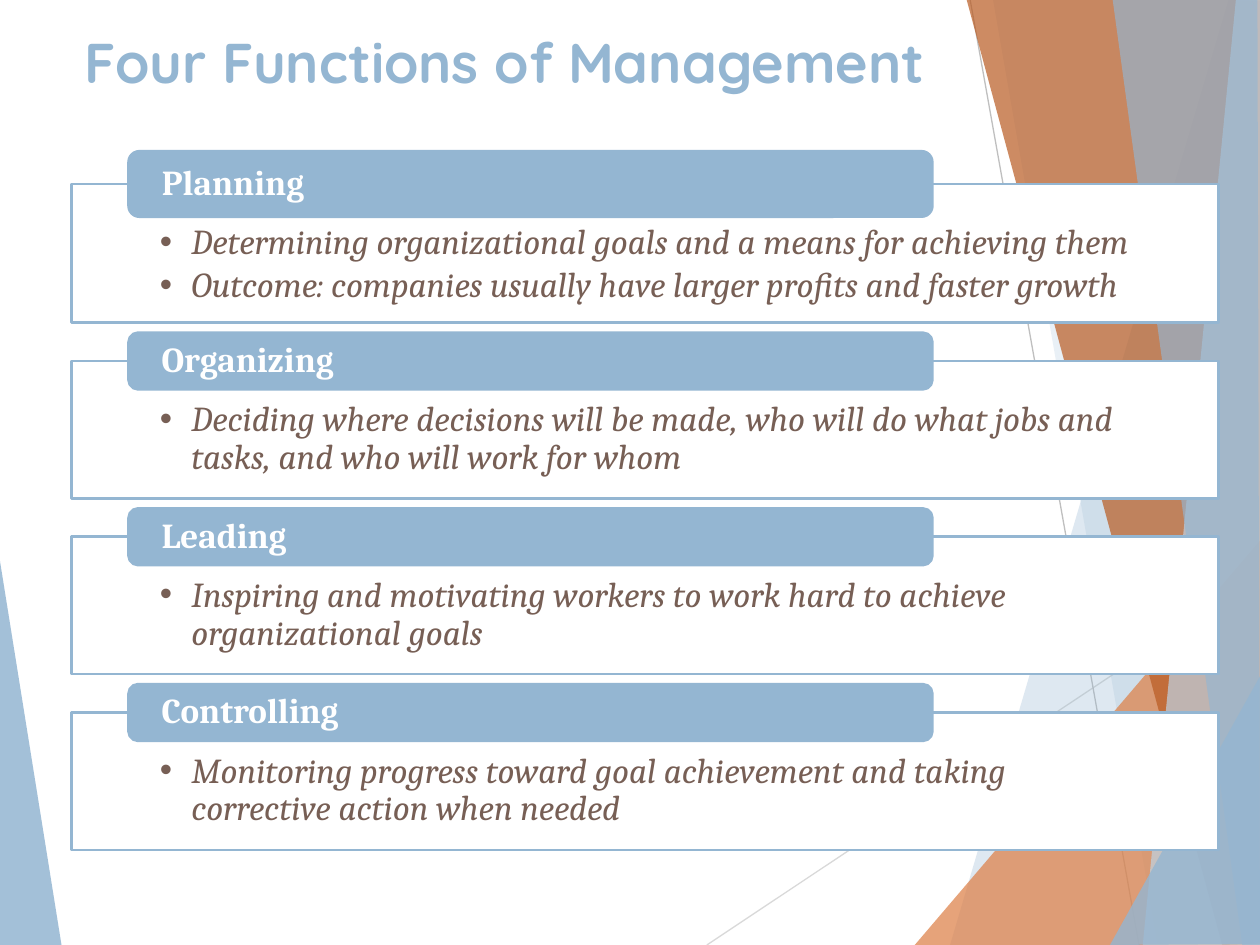
from pptx import Presentation
from pptx import util as u
from pptx.dml.color import RGBColor
from pptx.enum import shapes, text
from pptx.oxml.ns import qn
from lxml import etree

BLUE, BROWN, WHITE = "94B6D2", "775F55", "FFFFFF"

RAYS = [
    (BLUE, 85, [(-0.01, 4.39), (0.49, 7.51), (-0.01, 7.5)]),
    (BLUE, 30, [(9.75, 0), (7.54, 7.5), (10.02, 7.51), (10.01, 0.01)]),
    (BLUE, 20, [(7.88, -0.01), (9.19, 7.5), (10.01, 7.5), (10.01, -0.01)]),
    ("DD8047", 72, [(7.26, 7.5), (10, 4.29), (10.01, 7.5)]),
    ("B95B22", 70, [(7.67, -0.01), (9.7, 7.5), (10.01, 7.49), (10.01, -0.01)]),
    ("BFD3E4", 70, [(9.81, -0.01), (9.07, 7.5), (10.01, 7.5), (10, -0.01)]),
    (BLUE, 65, [(8.83, -0.01), (9.86, 7.5), (10, 7.5), (9.98, -0.01)]),
    (BLUE, 80, [(8.81, 7.5), (10.01, 5.35), (10.01, 7.49)]),
]
THIN_LINES = [
    ("D9D9D9", (5.61, 7.5), (10.01, 4.57)),
    ("BFBFBF", (7.7, 0), (9.04, 7.5)),
]
FUNCTIONS = [
    ("Planning", 0.52, 1.1, [
        "Determining organizational goals and a means for achieving them",
        "Outcome: companies usually have larger profits and faster growth"]),
    ("Organizing", 0.45, 1.09, [
        "Deciding where decisions will be made, who will do what jobs and tasks, "
        "and who will work for whom"]),
    ("Leading", 0.45, 1.09, [
        "Inspiring and motivating workers to work hard to achieve organizational goals"]),
    ("Controlling", 0.45, 1.09, [
        "Monitoring progress toward goal achievement and taking corrective action when needed"]),
]
FIRST_TOP, GAP = 1.2, 0.08


def color(value):
    """Turn a hex string into a colour."""
    return RGBColor.from_string(value)


def paint(shape, fill, line=None):
    """Give a shape a flat fill and an optional outline."""
    shape.shadow.inherit = False
    shape.fill.solid()
    shape.fill.fore_color.rgb = color(fill)
    if line:
        shape.line.color.rgb = color(line)
        shape.line.width = u.Pt(1.5)
    else:
        shape.line.fill.background()


def add_ray(page, fill, opacity, points):
    """Draw one translucent background polygon."""
    corners = [(u.Inches(x), u.Inches(y)) for x, y in points]
    builder = page.shapes.build_freeform(*corners[0])
    builder.add_line_segments(corners[1:], close=True)
    ray = builder.convert_to_shape()
    paint(ray, fill)
    tint = ray.fill._xPr.find(qn("a:solidFill"))[0]
    etree.SubElement(tint, qn("a:alpha"), val=str(opacity * 1000))


def add_thin_line(page, stroke, start, end):
    """Draw one thin background line."""
    ends = [u.Inches(value) for value in (*start, *end)]
    line = page.shapes.add_connector(shapes.MSO_CONNECTOR.STRAIGHT, *ends)
    line.line.color.rgb = color(stroke)
    line.line.width = u.Pt(0.75)
    etree.SubElement(line._element.spPr, qn("a:effectLst"))


def style_font(paragraph, name, size, ink, bold=False, italic=False):
    """Format every run of a paragraph."""
    for span in paragraph.runs:
        font = span.font
        font.name, font.size = name, u.Pt(size)
        font.bold, font.italic = bold, italic
        font.color.rgb = color(ink)


def set_insets(frame, left, top, right, bottom):
    """Set the inner margins of a text frame and let it wrap."""
    frame.word_wrap = True
    frame.margin_left, frame.margin_right = u.Inches(left), u.Inches(right)
    frame.margin_top, frame.margin_bottom = u.Inches(top), u.Inches(bottom)


def add_bullet(paragraph):
    """Give a paragraph a hanging round bullet."""
    properties = paragraph._p.get_or_add_pPr()
    properties.set("marL", str(u.Inches(0.25)))
    properties.set("indent", str(-u.Inches(0.25)))
    etree.SubElement(properties, qn("a:buFont"), typeface="Arial")
    etree.SubElement(properties, qn("a:buChar"), char="•")


def add_title(page, words):
    """Fill and place the title placeholder."""
    title = page.shapes.title
    title.left, title.top = u.Inches(0.57), u.Inches(0.17)
    title.width, title.height = u.Inches(8.27), u.Inches(1.44)
    frame = title.text_frame
    frame.text = words
    frame.auto_size = text.MSO_AUTO_SIZE.NONE
    frame.vertical_anchor = text.MSO_ANCHOR.TOP
    frame.paragraphs[0].alignment = text.PP_ALIGN.LEFT
    style_font(frame.paragraphs[0], "Quicksand", 32, BLUE, bold=True)


def add_body(page, top, height, points):
    """Draw the outlined box with its bulleted points."""
    box = page.shapes.add_shape(
        shapes.MSO_SHAPE.RECTANGLE,
        u.Inches(0.57), u.Inches(top), u.Inches(9.1), u.Inches(height))
    paint(box, WHITE, BLUE)
    frame = box.text_frame
    set_insets(frame, 0.7, 0.32, 0.65, 0.16)
    frame.vertical_anchor = text.MSO_ANCHOR.TOP
    frame.text = "\n".join(points)
    for paragraph in frame.paragraphs:
        paragraph.level = 1
        paragraph.alignment = text.PP_ALIGN.LEFT
        paragraph.line_spacing = 0.9
        paragraph.space_after = u.Pt(3)
        add_bullet(paragraph)
        style_font(paragraph, "Cambria", 20, BROWN, italic=True)


def add_tab(page, top, height, name):
    """Draw the rounded heading that sits on a box."""
    tab = page.shapes.add_shape(
        shapes.MSO_SHAPE.ROUNDED_RECTANGLE,
        u.Inches(1.02), u.Inches(top), u.Inches(6.38), u.Inches(height))
    paint(tab, BLUE, BLUE)
    frame = tab.text_frame
    set_insets(frame, 0.24, 0.02, 0.24, 0.02)
    frame.vertical_anchor = text.MSO_ANCHOR.MIDDLE
    frame.text = name
    paragraph = frame.paragraphs[0]
    paragraph.alignment = text.PP_ALIGN.LEFT
    paragraph.line_spacing = 0.9
    style_font(paragraph, "Cambria", 20, WHITE, bold=True)


def main():
    """Build the slide and save it."""
    deck = Presentation()
    deck.slide_width, deck.slide_height = u.Inches(10), u.Inches(7.5)
    page = deck.slides.add_slide(deck.slide_layouts[5])
    add_ray(page, *RAYS[0])
    for line in THIN_LINES:
        add_thin_line(page, *line)
    for ray in RAYS[1:]:
        add_ray(page, *ray)
    add_title(page, "Four Functions of Management")
    top = FIRST_TOP
    for name, tab_height, body_height, points in FUNCTIONS:
        body_top = top + tab_height / 2
        add_body(page, body_top, body_height, points)
        add_tab(page, top, tab_height, name)
        top = body_top + body_height + GAP
    deck.save("out.pptx")


if __name__ == "__main__":
    main()
